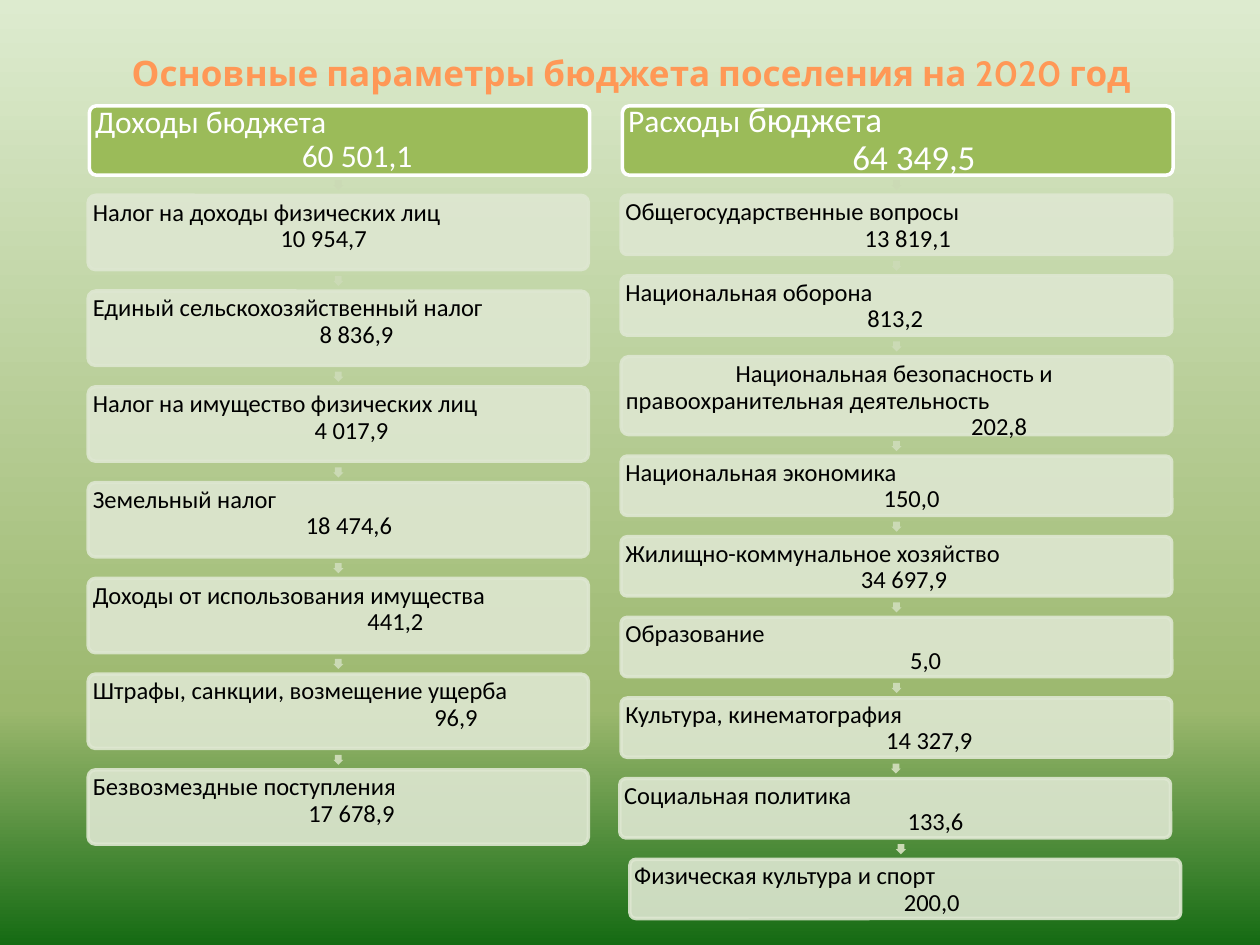
import pptx
import pptx.util
import pptx.dml.color
import pptx.enum.shapes
import pptx.enum.text
import pptx.oxml
import pptx.oxml.ns

Inches = pptx.util.Inches
Pt = pptx.util.Pt
RGBColor = pptx.dml.color.RGBColor
qn = pptx.oxml.ns.qn
Shape = pptx.enum.shapes.MSO_SHAPE
Anchor = pptx.enum.text.MSO_ANCHOR
Align = pptx.enum.text.PP_ALIGN

GREEN = RGBColor(0x9B, 0xBB, 0x59)
PALE = RGBColor(0xDE, 0xE7, 0xD1)
SAGE = RGBColor(0xCB, 0xDA, 0xB5)
WHITE = RGBColor(0xFF, 0xFF, 0xFF)
BLACK = RGBColor(0x00, 0x00, 0x00)
SKY = [(0, RGBColor(0xDD, 0xEB, 0xCF)), (75, RGBColor(0x9C, 0xB8, 0x6E)),
       (100, RGBColor(0x15, 0x6B, 0x13))]
FLAME = [(0, RGBColor(0x9D, 0x47, 0x00)), (78, RGBColor(0xFF, 0x98, 0x56)),
         (100, RGBColor(0xFF, 0xF5, 0xF1))]
GAP = 0.17

deck = pptx.Presentation()
deck.slide_width = Inches(10)
deck.slide_height = Inches(7.5)
slide = deck.slides.add_slide(deck.slide_layouts[6])

title = slide.shapes.add_textbox(Inches(0.51), Inches(0.26), Inches(9), Inches(0.63))
frame = title.text_frame
frame.word_wrap = True
frame.vertical_anchor = Anchor.MIDDLE
frame.paragraphs[0].alignment = Align.CENTER
head = frame.paragraphs[0].add_run()
head.text = "Основные параметры бюджета поселения на 2020 год"
head.font.size = Pt(20)
head.font.bold = True
head.font.name = "Cabin"

for fill, root, stops in [(slide.background.fill, slide.element, SKY),
                          (head.font.fill, head._r, FLAME)]:
    fill.gradient()
    fill.gradient_angle = 270
    ramp = next(root.iter(qn("a:gsLst")))
    ramp.clear()
    for place, tint in stops:
        ramp.append(pptx.oxml.parse_xml(
            f'<a:gs {pptx.oxml.ns.nsdecls("a")} pos="{place * 1000}">'
            f'<a:srgbClr val="{tint}"/></a:gs>'))


def add_box(left, top, width, height, fill, line, inset):
    box = slide.shapes.add_shape(Shape.ROUNDED_RECTANGLE, Inches(left), Inches(top),
                                 Inches(width), Inches(height))
    box.shadow.inherit = False
    box.adjustments[0] = 0.1
    box.fill.solid()
    box.fill.fore_color.rgb = fill
    box.line.color.rgb = line
    box.line.width = Pt(2)
    frame = box.text_frame
    frame.word_wrap = True
    frame.vertical_anchor = Anchor.TOP
    frame.margin_left = frame.margin_right = Inches(inset)
    frame.margin_top = frame.margin_bottom = Inches(inset)
    return box


def add_line(para, runs, color, margin=0, indent=0):
    para.alignment = Align.LEFT
    para.line_spacing = 0.9
    props = para._p.get_or_add_pPr()
    props.set("marL", str(Inches(margin)))
    props.set("indent", str(Inches(indent)))
    for text, size in runs:
        run = para.add_run()
        run.text = text
        run.font.size = Pt(size)
        run.font.name = "Calibri"
        run.font.color.rgb = color


income = [
    ("Налог на доходы физических лиц", "10 954,7", 1.49, 0, 0.59),
    ("Единый сельскохозяйственный налог", "8 836,9", 1.8, 0, 0.59),
    ("Налог на имущество физических лиц", "4 017,9", 1.76, 0, 0.59),
    ("Земельный налог", "18 474,6", 1.69, 0, 0.59),
    ("Доходы от использования имущества", "441,2", 2.18, 0, 0.59),
    ("Штрафы, санкции, возмещение ущерба", "96,9", 2.71, 0, 0.59),
    ("Безвозмездные поступления", "17 678,9", 1.71, 0, 0.59),
]
costs = [
    ("Общегосударственные вопросы", "13 819,1", 1.9, 0, 0.47),
    ("Национальная оборона", "813,2", 1.92, 0, 0.47),
    ("Национальная безопасность и правоохранительная деятельность", "202,8", 2.74, 0, 0.62),
    ("Национальная экономика", "150,0", 2.05, 0, 0.47),
    ("Жилищно-коммунальное хозяйство", "34 697,9", 1.87, 0, 0.47),
    ("Образование", "5,0", 2.26, 0, 0.47),
    ("Культура, кинематография", "14 327,9", 2.07, 0, 0.47),
    ("Социальная политика", "133,6", 2.25, -0.01, 0.47),
    ("Физическая культура и спорт", "200,0", 2.14, 0.07, 0.47),
]
columns = [
    (0.7, 3.97, [("Доходы бюджета", 18)], ("60 501,1", 18), 1.64, income),
    (4.93, 4.37, [("Расходы", 18), (" бюджета", 20)], ("64 349,5", 20), 1.78, costs),
]

for left, width, name, total, margin, rows in columns:
    box = add_box(left + 0.01, 0.84, width, 0.55, GREEN, WHITE, 0.03)
    box.text_frame.vertical_anchor = Anchor.MIDDLE
    add_line(box.text_frame.paragraphs[0], name, WHITE)
    add_line(box.text_frame.add_paragraph(), [total], WHITE, margin)

    top = 1.55
    for label, amount, margin, shift, height in rows:
        middle = left + width / 2 + shift / 2
        arrow = slide.shapes.add_shape(Shape.RIGHT_ARROW, Inches(middle - 0.04),
                                       Inches(top - 0.12), Inches(0.08), Inches(0.08))
        arrow.shadow.inherit = False
        arrow.rotation = 90
        arrow.adjustments[0] = 0.67
        arrow.fill.solid()
        arrow.fill.fore_color.rgb = SAGE
        arrow.line.fill.background()

        box = add_box(left + shift, top, width, height, PALE, PALE, 0.02)
        for tint in box._element.spPr.iter(qn("a:srgbClr")):
            tint.append(pptx.oxml.parse_xml(
                f'<a:alpha {pptx.oxml.ns.nsdecls("a")} val="90000"/>'))
        indent = 0.87 if height > 0.6 else 0
        add_line(box.text_frame.paragraphs[0], [(label, 14)], BLACK, 0, indent)
        add_line(box.text_frame.add_paragraph(), [(amount, 14)], BLACK, margin)
        top += height + GAP

deck.save("out.pptx")
